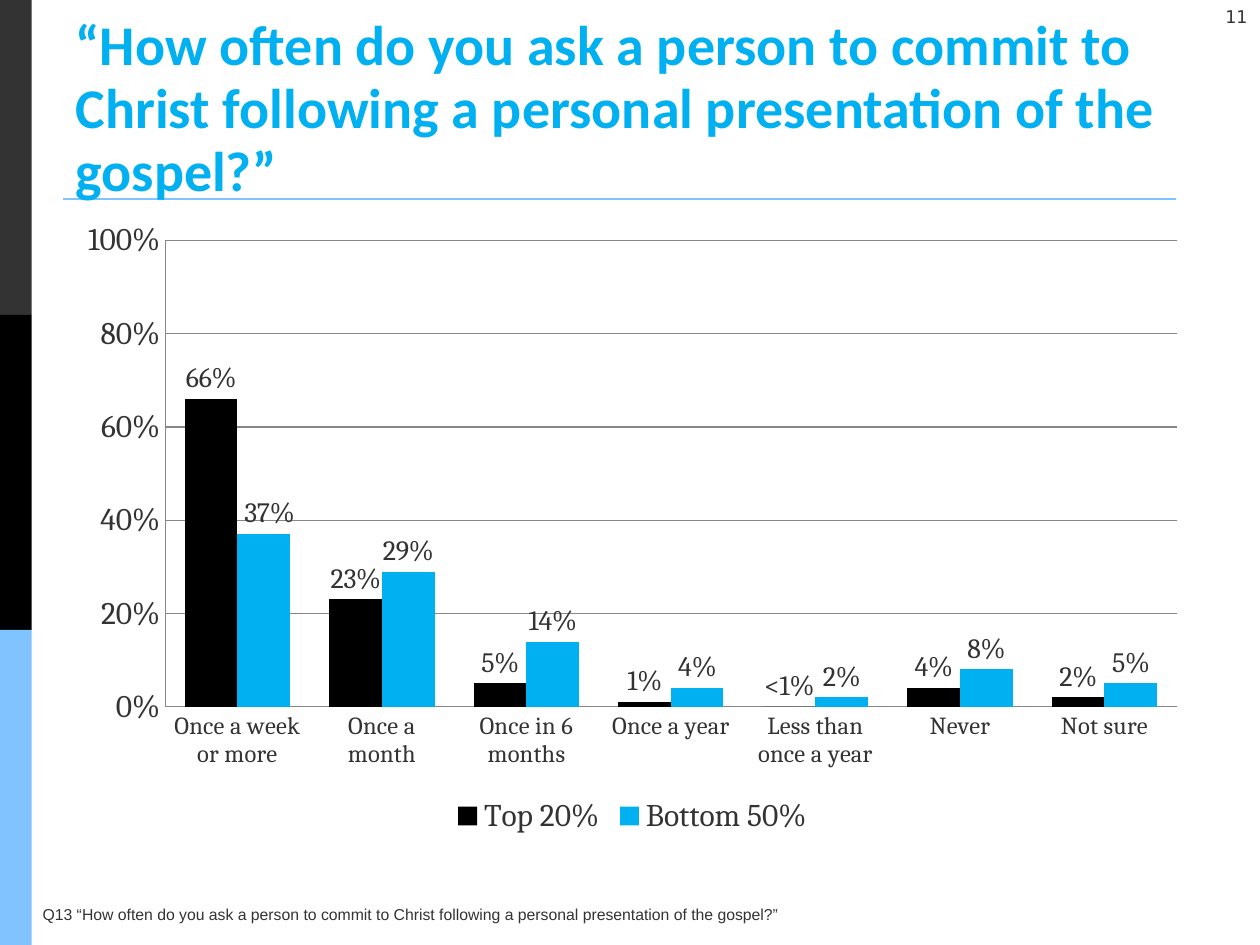
from dataclasses import dataclass

from lxml import etree
from pptx import Presentation
from pptx.chart.data import CategoryChartData
from pptx.dml.color import RGBColor
from pptx.enum.chart import XL_CHART_TYPE, XL_LABEL_POSITION, XL_LEGEND_POSITION, XL_TICK_MARK
from pptx.enum.shapes import MSO_CONNECTOR, MSO_SHAPE
from pptx.enum.text import MSO_ANCHOR, MSO_AUTO_SIZE, PP_ALIGN
from pptx.oxml import parse_xml
from pptx.oxml.ns import nsdecls, qn
from pptx.util import Cm, Pt

COLUMN = XL_CHART_TYPE.COLUMN_CLUSTERED
ABOVE = XL_LABEL_POSITION.OUTSIDE_END
BELOW = XL_LEGEND_POSITION.BOTTOM
NO_TICK = XL_TICK_MARK.NONE
RECT = MSO_SHAPE.RECTANGLE
LEFT, RIGHT = PP_ALIGN.LEFT, PP_ALIGN.RIGHT

DARK = RGBColor(0x33, 0x33, 0x33)
BLACK = RGBColor(0, 0, 0)
PALE = RGBColor(0x81, 0xC3, 0xFF)
CYAN = RGBColor(0x00, 0xB0, 0xF0)
GRAY = RGBColor(0x87, 0x87, 0x87)

ASK = ("“How often do you ask a person to commit to Christ "
       "following a personal presentation of the gospel?”")
CATS = ["Once a week or more", "Once a month", "Once in 6 months", "Once a year",
        "Less than once a year", "Never", "Not sure"]


@dataclass
class Group:
    name: str
    vals: list[float]
    color: RGBColor


@dataclass
class Note:
    text: str
    box: tuple[float, float, float, float]
    font: str
    size: int
    align: PP_ALIGN


GROUPS = [
    Group("Top 20%", [0.66, 0.23, 0.05, 0.01, 0, 0.04, 0.02], BLACK),
    Group("Bottom 50%", [0.37, 0.29, 0.14, 0.04, 0.02, 0.08, 0.05], CYAN),
]
NOTES = [
    Note("11", (24.13, 0, 1.27, 0.84), "DejaVu Sans", 10, RIGHT),
    Note("Q13 " + ASK, (0.61, 18.11, 19, 0.64), "Arial", 9, LEFT),
]


def style(font, name: str, size: int, color: RGBColor) -> None:
    font.name, font.size = name, Pt(size)
    font.color.rgb = color


def add_band(slide, row: int, color: RGBColor) -> None:
    band = slide.shapes.add_shape(RECT, 0, Cm(6.35 * row), Cm(0.64), Cm(6.35))
    band.shadow.inherit = False
    band.fill.solid()
    band.fill.fore_color.rgb = color
    band.line.fill.background()


def add_rule(slide) -> None:
    rule = slide.shapes.add_connector(
        MSO_CONNECTOR.STRAIGHT, Cm(1.27), Cm(4.01), Cm(23.7), Cm(4.01))
    rule.line.color.rgb = PALE
    rule.line.width = Pt(1.5)
    etree.SubElement(rule.element.spPr, qn("a:effectLst"))


def add_note(slide, note: Note) -> None:
    frame = slide.shapes.add_textbox(*map(Cm, note.box)).text_frame
    frame.word_wrap = True
    para = frame.paragraphs[0]
    para.text, para.alignment = note.text, note.align
    style(para.font, note.font, note.size, DARK)


def set_title(slide) -> None:
    title = slide.shapes.title
    title.left, title.top, title.width, title.height = map(Cm, (1.27, 1.04, 22.4, 3.18))
    title.element.getparent().append(title.element)  # bring to front
    frame = title.text_frame
    frame.auto_size = MSO_AUTO_SIZE.NONE
    frame.vertical_anchor = MSO_ANCHOR.BOTTOM
    para = frame.paragraphs[0]
    para.text, para.alignment = ASK, LEFT
    para.line_spacing = Pt(36)
    style(para.font, "Calibri", 32, CYAN)
    para.font.bold = True


def add_chart(slide) -> None:
    data = CategoryChartData(number_format="0%")
    data.categories = CATS
    for group in GROUPS:
        data.add_series(group.name, group.vals)
    chart = slide.shapes.add_chart(
        COLUMN, *map(Cm, (1.32, 4.22, 22.86, 12.73)), data).chart
    style(chart.font, "Cambria", 18, DARK)
    chart.has_title = False
    chart.has_legend = True
    chart.legend.position = BELOW
    chart.legend.include_in_layout = False

    # Axes
    cat, val = chart.category_axis, chart.value_axis
    for axis, size in ((cat, 14), (val, 18)):
        axis.major_tick_mark = axis.minor_tick_mark = NO_TICK
        axis.format.line.color.rgb = GRAY
        style(axis.tick_labels.font, "Cambria", size, DARK)
    val.minimum_scale, val.maximum_scale, val.major_unit = 0, 1, 0.2
    val.tick_labels.number_format = "0%"
    val.tick_labels.number_format_is_linked = False
    val.major_gridlines.format.line.color.rgb = GRAY

    # Columns and their labels
    plot = chart.plots[0]
    plot.gap_width, plot.overlap = 75, 0
    plot.vary_by_categories = False
    for bars, group in zip(plot.series, GROUPS):
        bars.format.fill.solid()
        bars.format.fill.fore_color.rgb = group.color
        labels = bars.data_labels
        labels.show_value = True
        labels.position = ABOVE
        labels.number_format = "0%"
        labels.number_format_is_linked = False
        style(labels.font, "Cambria", 16, DARK)

    top, low = plot.series
    tiny = top.points[4].data_label
    para = tiny.text_frame.paragraphs[0]
    para.text = "<1%"
    style(para.font, "Cambria", 16, DARK)
    tiny.position = ABOVE

    # Nudge the first lower label to the right
    first = low.points[0].data_label
    style(first.font, "Cambria", 16, DARK)
    first.position = ABOVE
    mark = low.data_labels._element.find(qn("c:dLbl"))
    mark.insert(1, parse_xml(
        f'<c:layout {nsdecls("c")}><c:manualLayout><c:x val="0.005"/>'
        '<c:y val="0"/></c:manualLayout></c:layout>'))


def main() -> None:
    deck = Presentation()
    deck.slide_width, deck.slide_height = Cm(25.4), Cm(19.05)
    slide = deck.slides.add_slide(deck.slide_layouts[5])
    for row, color in enumerate((DARK, BLACK, PALE)):
        add_band(slide, row, color)
    add_rule(slide)
    for note in NOTES:
        add_note(slide, note)
    add_chart(slide)
    set_title(slide)
    deck.save("out.pptx")


if __name__ == "__main__":
    main()
